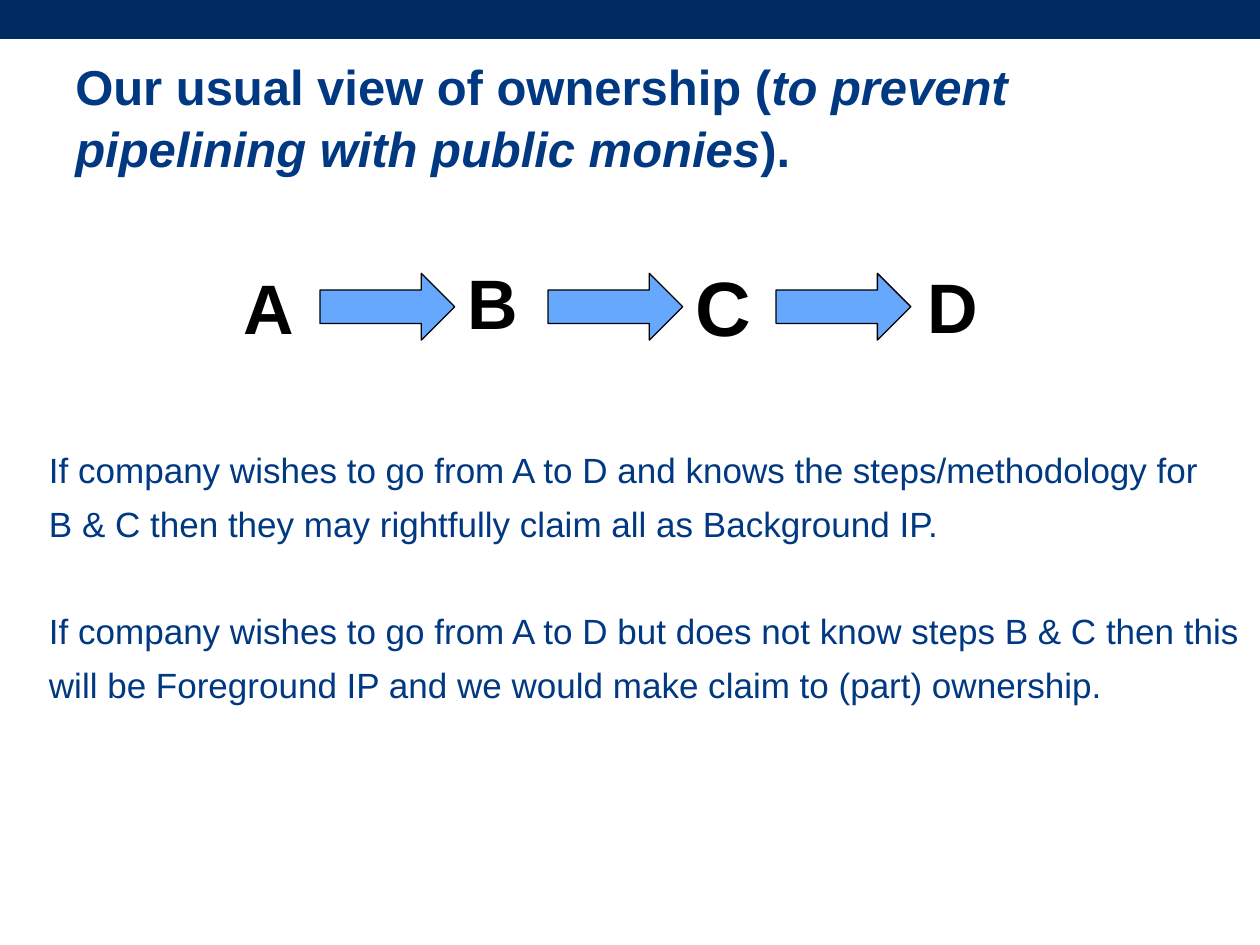
from dataclasses import dataclass

import pptx
import pptx.dml.color
import pptx.enum.shapes
import pptx.enum.text
import pptx.util

Pt = pptx.util.Pt
ShapeType = pptx.enum.shapes.MSO_SHAPE
Anchor = pptx.enum.text.MSO_ANCHOR

COLORS = {"bar": "002A62", "text": "003882", "arrow": "67A8FF", "black": "000000"}
FONT = "Arial"
ARROW_LEFT, ARROW_PITCH, ARROW_COUNT = 182.9, 130.3, 3


@dataclass
class Box:
    left: float
    top: float
    width: float
    height: float


@dataclass
class Run:
    text: str
    italic: bool = False


@dataclass
class Step:
    letter: str
    box: Box
    size: float = 40


@dataclass
class Line:
    text: str
    space_before: float


TITLE = [
    Run("Our usual view of ownership ("),
    Run("to prevent pipelining with public monies", italic=True),
    Run(")."),
]
STEPS = [
    Step("A", Box(131.8, 147.6, 44, 55.4)),
    Step("B", Box(259.9, 144.7, 63.4, 55.4)),
    Step("C", Box(390.2, 144.7, 46.8, 60.5), size=44),
    Step("D", Box(522.7, 146.9, 44, 55.4)),
]
BODY = [
    Line("If company wishes to go from A to D and knows the steps/methodology for", 0),
    Line("B & C then they may rightfully claim all as Background IP.", 7),
    Line("If company wishes to go from A to D but does not know steps B & C then this", 37),
    Line("will be Foreground IP and we would make claim to (part) ownership.", 7),
]


def rgb(name: str) -> pptx.dml.color.RGBColor:
    return pptx.dml.color.RGBColor.from_string(COLORS[name])


def lengths(box: Box) -> list:
    return [Pt(value) for value in (box.left, box.top, box.width, box.height)]


def add_filled_shape(slide, kind, box: Box, fill: str, outlined: bool = False) -> None:
    shape = slide.shapes.add_shape(kind, *lengths(box))
    shape.shadow.inherit = False
    shape.fill.solid()
    shape.fill.fore_color.rgb = rgb(fill)
    if outlined:
        shape.line.color.rgb = rgb("black")
        shape.line.width = Pt(0.75)
    else:
        shape.line.fill.background()


def add_text_frame(slide, box: Box, anchor=Anchor.TOP):
    frame = slide.shapes.add_textbox(*lengths(box)).text_frame
    frame.word_wrap = True
    frame.vertical_anchor = anchor
    return frame


def add_run(paragraph, run: Run, size: float, color: str, bold: bool = False) -> None:
    text_run = paragraph.add_run()
    text_run.text = run.text
    font = text_run.font
    font.name = FONT
    font.size = Pt(size)
    font.bold = bold
    font.italic = run.italic
    font.color.rgb = rgb(color)


def add_title(slide) -> None:
    frame = add_text_frame(slide, Box(36, 43.2, 653, 45.4), Anchor.MIDDLE)
    paragraph = frame.paragraphs[0]
    paragraph.line_spacing = 1.05
    for run in TITLE:
        add_run(paragraph, run, 28, "text", bold=True)


def add_steps(slide) -> None:
    for index in range(ARROW_COUNT):
        box = Box(ARROW_LEFT + index * ARROW_PITCH, 156.2, 77, 38.2)
        add_filled_shape(slide, ShapeType.RIGHT_ARROW, box, "arrow", outlined=True)
    for step in STEPS:
        frame = add_text_frame(slide, step.box)
        add_run(frame.paragraphs[0], Run(step.letter), step.size, "black", bold=True)


def add_body(slide) -> None:
    frame = add_text_frame(slide, Box(20.9, 252.7, 704.9, 128.2))
    for index, line in enumerate(BODY):
        paragraph = frame.add_paragraph() if index else frame.paragraphs[0]
        if line.space_before:
            paragraph.space_before = Pt(line.space_before)
        add_run(paragraph, Run(line.text), 20, "text")


def main() -> None:
    presentation = pptx.Presentation()
    presentation.slide_width = Pt(720)
    presentation.slide_height = Pt(540)
    slide = presentation.slides.add_slide(presentation.slide_layouts[6])
    add_filled_shape(slide, ShapeType.RECTANGLE, Box(0, 0, 720, 22.3), "bar")
    add_title(slide)
    add_steps(slide)
    add_body(slide)
    presentation.save("out.pptx")


if __name__ == "__main__":
    main()
